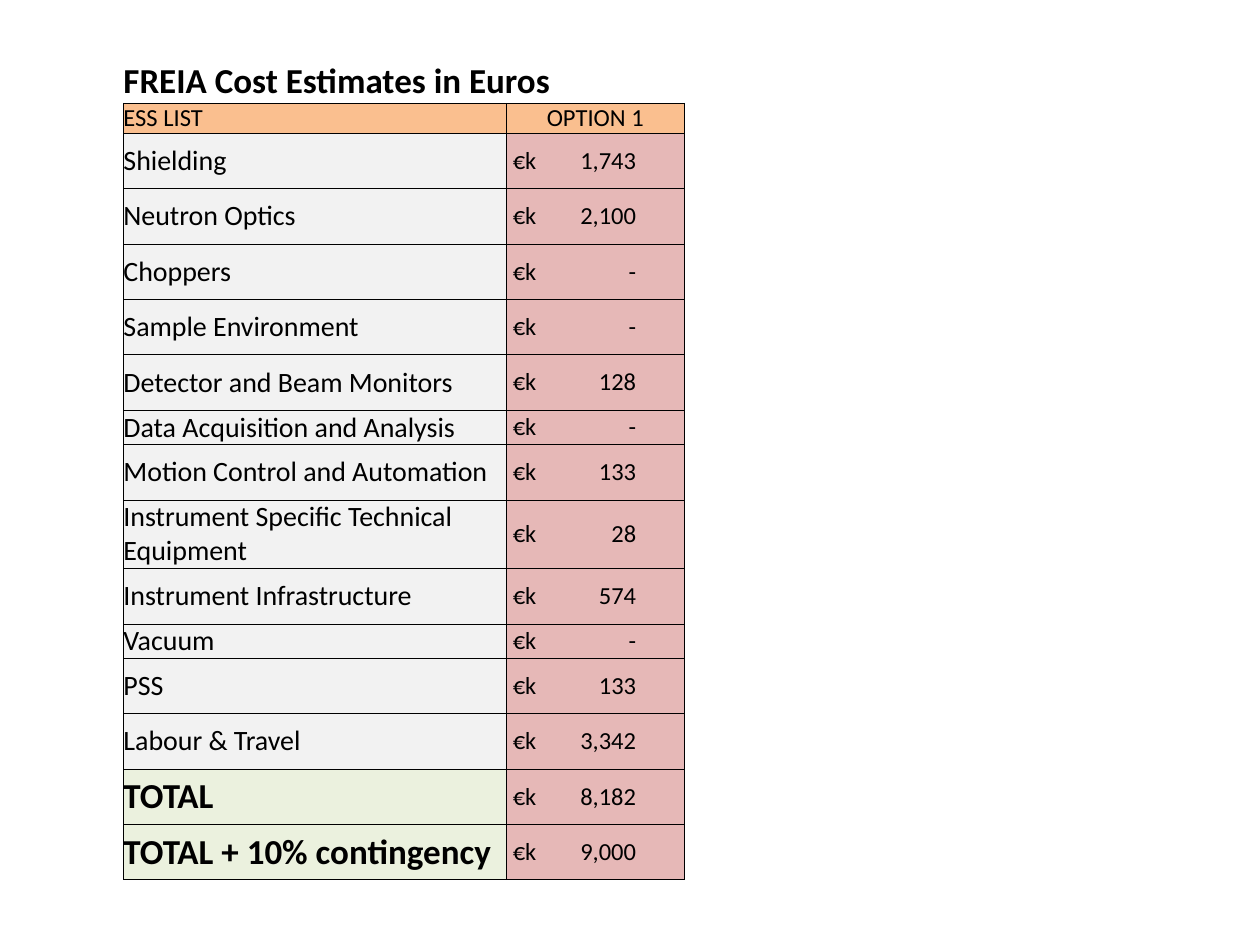
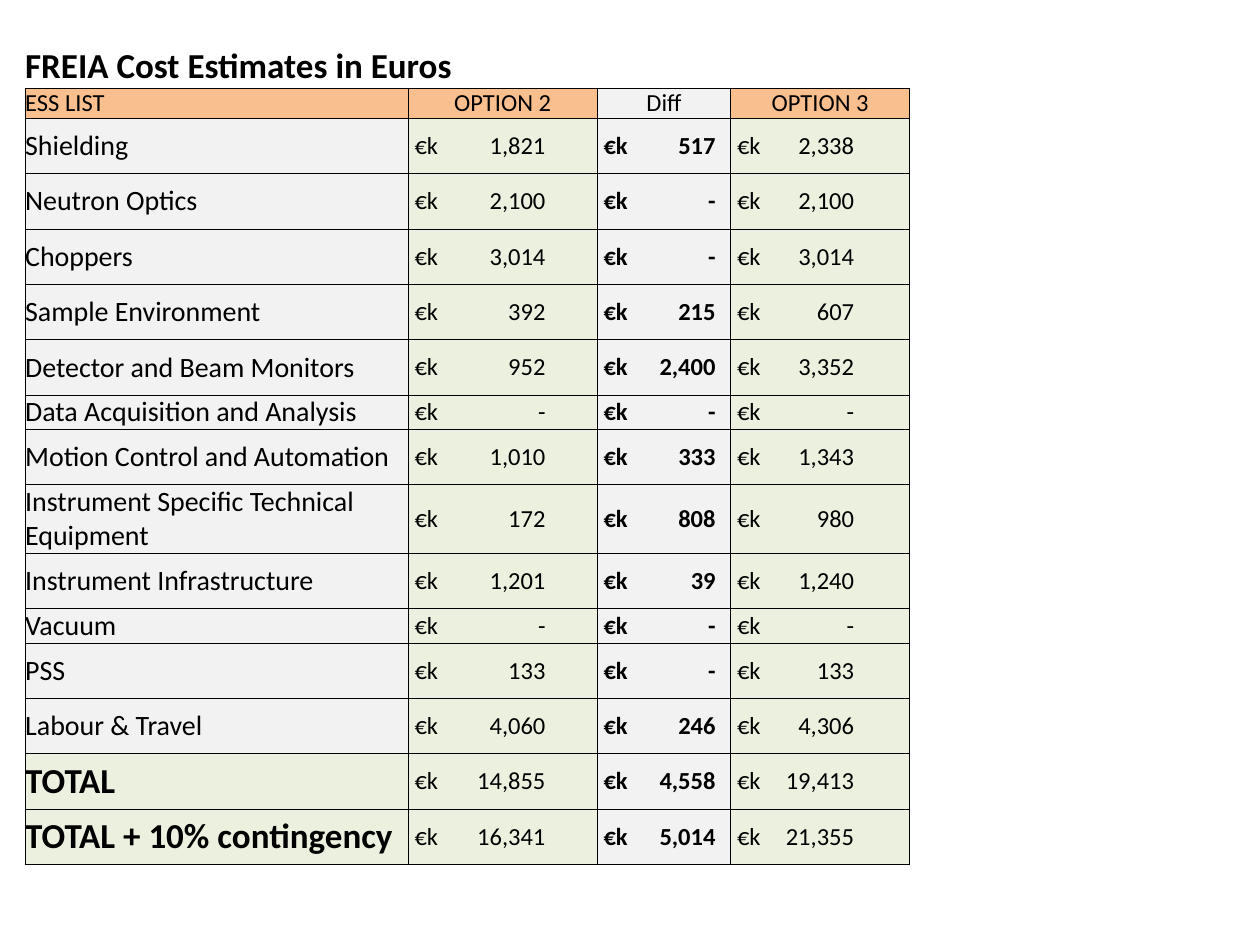
"""Build two FREIA cost tables, one slide for each set of options."""
from lxml.etree import SubElement
from pptx import Presentation
from pptx.dml.color import RGBColor
from pptx.enum.text import MSO_ANCHOR, PP_ALIGN
from pptx.oxml.ns import qn
from pptx.util import Inches, Pt

FONT = "Calibri"
BLACK, ORANGE, GREY, PINK, GREEN = "000000", "FABF8F", "F2F2F2", "E6B8B7", "EBF1DE"
TITLE = "FREIA Cost Estimates in Euros"
LIST_HEADING = "ESS LIST"
CURRENCY = "€k"
ITEMS = [
    "Shielding", "Neutron Optics", "Choppers", "Sample Environment",
    "Detector and Beam Monitors", "Data Acquisition and Analysis",
    "Motion Control and Automation", "Instrument Specific Technical Equipment",
    "Instrument Infrastructure", "Vacuum", "PSS", "Labour & Travel",
    "TOTAL", "TOTAL + 10% contingency",
]
LOW_ITEMS = ("Data Acquisition and Analysis", "Vacuum")
LIST_WIDTH = 3.04
TITLE_HEIGHT, LOW_HEIGHT, ITEM_HEIGHT = 0.29, 0.23, 0.44
AMOUNT_INSET = 0.05

SLIDES = [
    {"left": 0.98, "top": 0.48, "title_span": 2, "columns": [
        {"heading": "OPTION 1", "width": 1.41, "tab": 0.98, "head_fill": ORANGE,
         "fill": PINK, "bold": False,
         "amounts": ["1,743", "2,100", "-", "-", "128", "-", "133", "28", "574",
                     "-", "133", "3,342", "8,182", "9,000"]},
    ]},
    {"left": 0.2, "top": 0.36, "title_span": 3, "columns": [
        {"heading": "OPTION 2", "width": 1.5, "tab": 1.04, "head_fill": ORANGE,
         "fill": GREEN, "bold": False,
         "amounts": ["1,821", "2,100", "3,014", "392", "952", "-", "1,010", "172",
                     "1,201", "-", "133", "4,060", "14,855", "16,341"]},
        {"heading": "Diff", "width": 1.06, "tab": 0.89, "head_fill": GREY,
         "fill": GREY, "bold": True,
         "amounts": ["517", "-", "-", "215", "2,400", "-", "333", "808", "39",
                     "-", "-", "246", "4,558", "5,014"]},
        {"heading": "OPTION 3", "width": 1.42, "tab": 0.93, "head_fill": ORANGE,
         "fill": GREEN, "bold": False,
         "amounts": ["2,338", "2,100", "3,014", "607", "3,352", "-", "1,343", "980",
                     "1,240", "-", "133", "4,306", "19,413", "21,355"]},
    ]},
]


def color(value):
    return RGBColor.from_string(value)


def write(cell, text, size=14, bold=False, align=PP_ALIGN.LEFT,
          anchor=MSO_ANCHOR.MIDDLE, tab=None):
    cell.vertical_anchor = anchor
    paragraph = cell.text_frame.paragraphs[0]
    paragraph.alignment = align
    if tab:
        cell.margin_left = Inches(AMOUNT_INSET)
        tabs = SubElement(paragraph._p.get_or_add_pPr(), qn("a:tabLst"))
        SubElement(tabs, qn("a:tab"), pos=str(Inches(tab)), algn="r")
    run = paragraph.add_run()
    run.text = text
    run.font.name = FONT
    run.font.size = Pt(size)
    run.font.bold = bold
    run.font.color.rgb = color(BLACK)


def format_cell(cell, fill, sides):
    cell.margin_left = cell.margin_right = cell.margin_top = cell.margin_bottom = 0
    properties = cell._tc.get_or_add_tcPr()
    for side in "LRTB":
        line = SubElement(properties, qn(f"a:ln{side}"), w=str(Pt(0.5)))
        if side in sides:
            solid = SubElement(line, qn("a:solidFill"))
            SubElement(solid, qn("a:srgbClr"), val=BLACK)
        else:
            SubElement(line, qn("a:noFill"))
    if fill:
        cell.fill.solid()
        cell.fill.fore_color.rgb = color(fill)
    else:
        cell.fill.background()


def add_cost_table(slide, left, top, title_span, columns):
    widths = [LIST_WIDTH] + [column["width"] for column in columns]
    heights = [TITLE_HEIGHT, LOW_HEIGHT] + [
        LOW_HEIGHT if item in LOW_ITEMS else ITEM_HEIGHT for item in ITEMS]
    table = slide.shapes.add_table(
        len(heights), len(widths), Inches(left), Inches(top),
        Inches(sum(widths)), Inches(sum(heights))).table
    table.first_row = table.horz_banding = False
    for table_column, width in zip(table.columns, widths):
        table_column.width = Inches(width)
    for row, height in zip(table.rows, heights):
        row.height = Inches(height)

    for index in range(len(widths)):
        format_cell(table.cell(0, index), None, "B")
    table.cell(0, 0).merge(table.cell(0, title_span - 1))
    write(table.cell(0, 0), TITLE, size=20, bold=True, anchor=MSO_ANCHOR.BOTTOM)

    format_cell(table.cell(1, 0), ORANGE, "LRTB")
    write(table.cell(1, 0), LIST_HEADING, anchor=MSO_ANCHOR.BOTTOM)
    for row, item in enumerate(ITEMS, start=2):
        total = item.startswith("TOTAL")
        format_cell(table.cell(row, 0), GREEN if total else GREY, "LRTB")
        write(table.cell(row, 0), item, size=20 if total else 16, bold=total)

    for index, column in enumerate(columns, start=1):
        heading = table.cell(1, index)
        format_cell(heading, column["head_fill"], "LRTB")
        write(heading, column["heading"], align=PP_ALIGN.CENTER,
              anchor=MSO_ANCHOR.BOTTOM)
        for row, amount in enumerate(column["amounts"], start=2):
            cell = table.cell(row, index)
            format_cell(cell, column["fill"], "LRTB")
            write(cell, f"{CURRENCY}\t{amount}", bold=column["bold"],
                  tab=column["tab"])


def main():
    presentation = Presentation()
    presentation.slide_width = Inches(10)
    presentation.slide_height = Inches(7.5)
    blank_layout = presentation.slide_layouts[6]
    for content in SLIDES:
        add_cost_table(presentation.slides.add_slide(blank_layout), **content)
    presentation.save("out.pptx")


if __name__ == "__main__":
    main()
